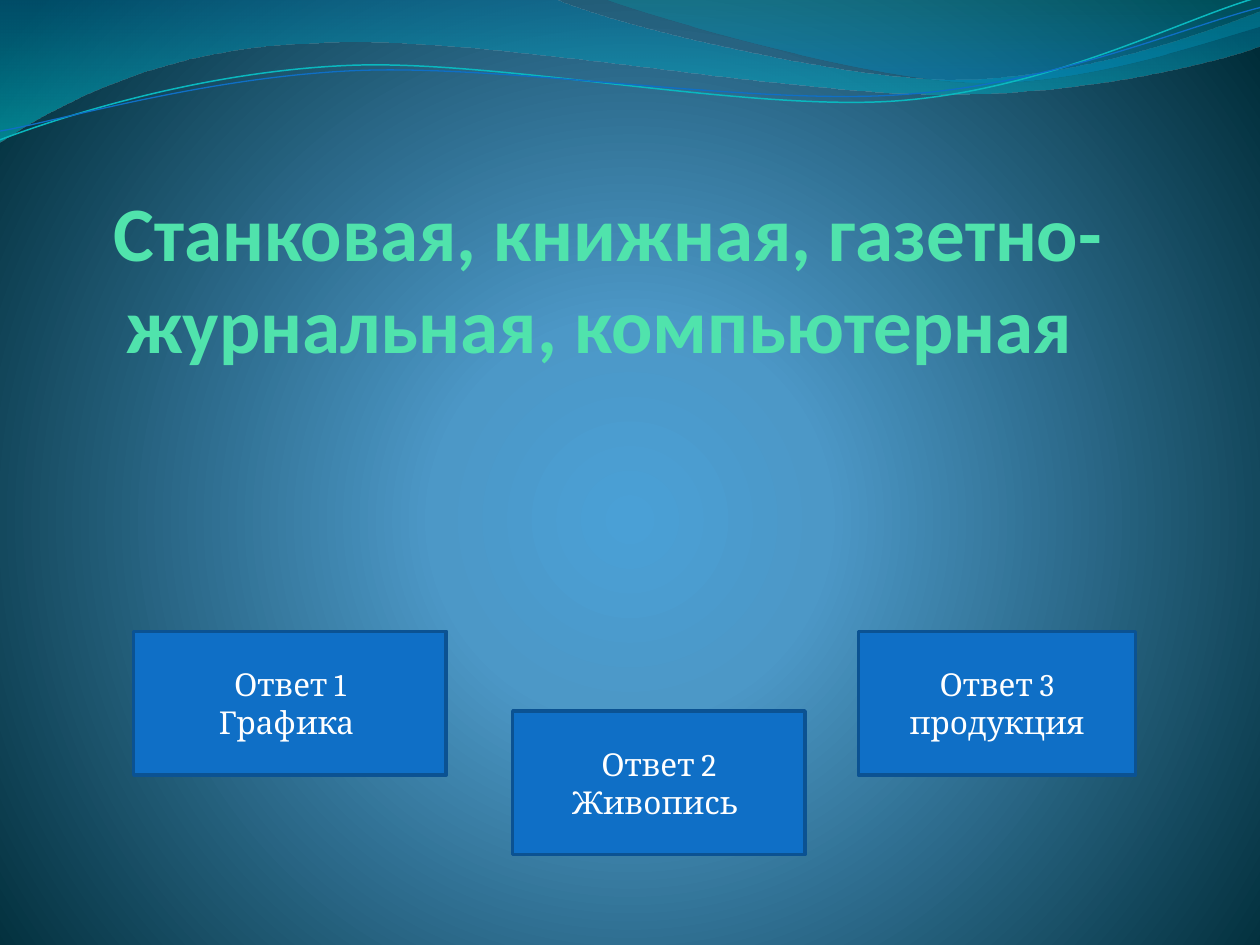
import pptx
import pptx.dml.color
import pptx.enum.shapes
import pptx.enum.text
import pptx.oxml
import pptx.oxml.ns
import pptx.util

Pt = pptx.util.Pt
CENTER = pptx.enum.text.PP_ALIGN.CENTER
ANCHOR = pptx.enum.text.MSO_ANCHOR

COLORS = {
    "center": "4AA0D6", "middle": "4C98C7", "edge": "002C38",
    "wave_blue": "0074A1", "wave_cyan": "00C6CF",
    "crest_teal": "00A1A9", "crest_blue": "008BBF",
    "line_teal": "0AB8BF", "button": "0F6FC6", "border": "0B5292",
    "title": "50E3AC", "text": "FFFFFF",
}
BACKGROUND = [(0, "center", 100), (25, "middle", 100), (100, "edge", 100)]
CIRCLE = ('<a:path path="circle"><a:fillToRect l="10000" t="110000" '
          'r="10000" b="100000"/></a:path>')
DOWN = '<a:lin ang="5400000" scaled="0"/>'

WAVES = [
    ([(0, 0), (316.8, -0.7),
      (342.7, 12.2, 478.1, 45.4, 545.8, 45.4),
      (614.2, 45.4, 689.8, 18.7, 720, 6.5), (720.7, 25.9),
      (707.8, 31.7, 626.4, 54.7, 537.1, 54),
      (446.4, 54, 275, 20.2, 185, 24.5),
      (92.9, 25.9, 33.1, 59.8, -0.7, 81.4), (0, 0)],
     [(0, "wave_blue", 45), (100, "wave_cyan", 55)]),
    ([(344.9, -0.7), (366.5, 7.9, 491, 44.6, 553.7, 46.8),
      (616.3, 49.7, 691.9, 23, 720, 15.1), (720, 0), (344.9, -0.7)],
     [(0, "crest_teal", 30), (80, "crest_blue", 45)]),
]
STRANDS = [
    ([(0, 79.9), (34.6, 67, 113.8, 41, 199.4, 37.4),
      (284.4, 33.8, 427, 64.1, 513.4, 57.6),
      (599.8, 51.1, 675.4, 10.8, 718.6, -1.4)], "line_teal", 0.85),
    ([(0, 74.9), (33.8, 69.1, 118.1, 43.9, 203.8, 40.3),
      (290.2, 36.7, 430.6, 60.5, 516.2, 54),
      (601.9, 48.2, 677.5, 15.1, 720, 4.3)], "button", 0.75),
]
ANSWERS = [
    (76.4, 360.8, 178.6, ["Ответ 1", "Графика "]),
    (293, 406.3, 167, ["Ответ 2", "Живопись "]),
    (490.5, 360.8, 158.4, ["Ответ 3", "продукция"]),
]


def rgb(name):
    return pptx.dml.color.RGBColor.from_string(COLORS[name])


def set_gradient(fill, element, stops, direction):
    fill.gradient()
    grad = element.xpath(".//a:gradFill")[0]
    gs = "".join(
        f'<a:gs pos="{pos * 1000}"><a:srgbClr val="{COLORS[color]}">'
        f'<a:alpha val="{alpha * 1000}"/></a:srgbClr></a:gs>'
        for pos, color, alpha in stops)
    grad.getparent().replace(grad, pptx.oxml.parse_xml(
        f'<a:gradFill {pptx.oxml.ns.nsdecls("a")} rotWithShape="1">'
        f'<a:gsLst>{gs}</a:gsLst>{direction}</a:gradFill>'))


def add_curve(s, segments, close):
    points = [(Pt(seg[i]), Pt(seg[i + 1]))
              for seg in segments for i in range(0, len(seg), 2)]
    builder = s.shapes.build_freeform(*points[0])
    builder.add_line_segments(points[1:], close=close)
    sp = builder.convert_to_shape()
    sp.shadow.inherit = False
    steps = iter(sp.element.xpath(".//a:lnTo"))
    for seg in segments[1:]:
        step = next(steps)
        if len(seg) == 6:
            step.tag = pptx.oxml.ns.qn("a:cubicBezTo")
            for other in (next(steps), next(steps)):
                step.append(other[0])
                other.getparent().remove(other)
    return sp


def add_wave(s, segments, stops):
    sp = add_curve(s, segments, True)
    sp.line.fill.background()
    set_gradient(sp.fill, sp.element, stops, DOWN)


def add_strand(s, segments, color, width):
    sp = add_curve(s, segments, False)
    sp.fill.background()
    sp.line.color.rgb = rgb(color)
    sp.line.width = Pt(width)


def write(tf, lines, anchor, font, size, color, bold=False):
    tf.word_wrap = True
    tf.vertical_anchor = anchor
    for i, line in enumerate(lines):
        p = tf.add_paragraph() if i else tf.paragraphs[0]
        p.alignment = CENTER
        r = p.add_run()
        r.text = line
        r.font.name = font
        r.font.size = Pt(size)
        r.font.bold = bold
        r.font.color.rgb = rgb(color)


def add_title(s, text):
    sp = s.shapes.add_textbox(Pt(41.8), Pt(103.7), Pt(612), Pt(107.3))
    tf = sp.text_frame
    tf.margin_left = tf.margin_top = tf.margin_right = tf.margin_bottom = 0
    write(tf, [text], ANCHOR.BOTTOM, "Calibri", 44, "title", True)


def add_answer(s, left, top, width, lines):
    kind = pptx.enum.shapes.MSO_SHAPE.ACTION_BUTTON_CUSTOM
    sp = s.shapes.add_shape(kind, Pt(left), Pt(top), Pt(width), Pt(82.1))
    sp.shadow.inherit = False
    sp.fill.solid()
    sp.fill.fore_color.rgb = rgb("button")
    sp.line.color.rgb = rgb("border")
    sp.line.width = Pt(2)
    write(sp.text_frame, lines, ANCHOR.MIDDLE, "Cambria", 18, "text")


def main():
    prs = pptx.Presentation()
    prs.slide_width, prs.slide_height = Pt(720), Pt(540)
    s = prs.slides.add_slide(prs.slide_layouts[6])
    set_gradient(s.background.fill, s.element, BACKGROUND, CIRCLE)
    for wave in WAVES:
        add_wave(s, *wave)
    for strand in STRANDS:
        add_strand(s, *strand)
    add_title(s, "Станковая, книжная, газетно-журнальная, компьютерная ")
    for answer in ANSWERS:
        add_answer(s, *answer)
    prs.save("out.pptx")


if __name__ == "__main__":
    main()
